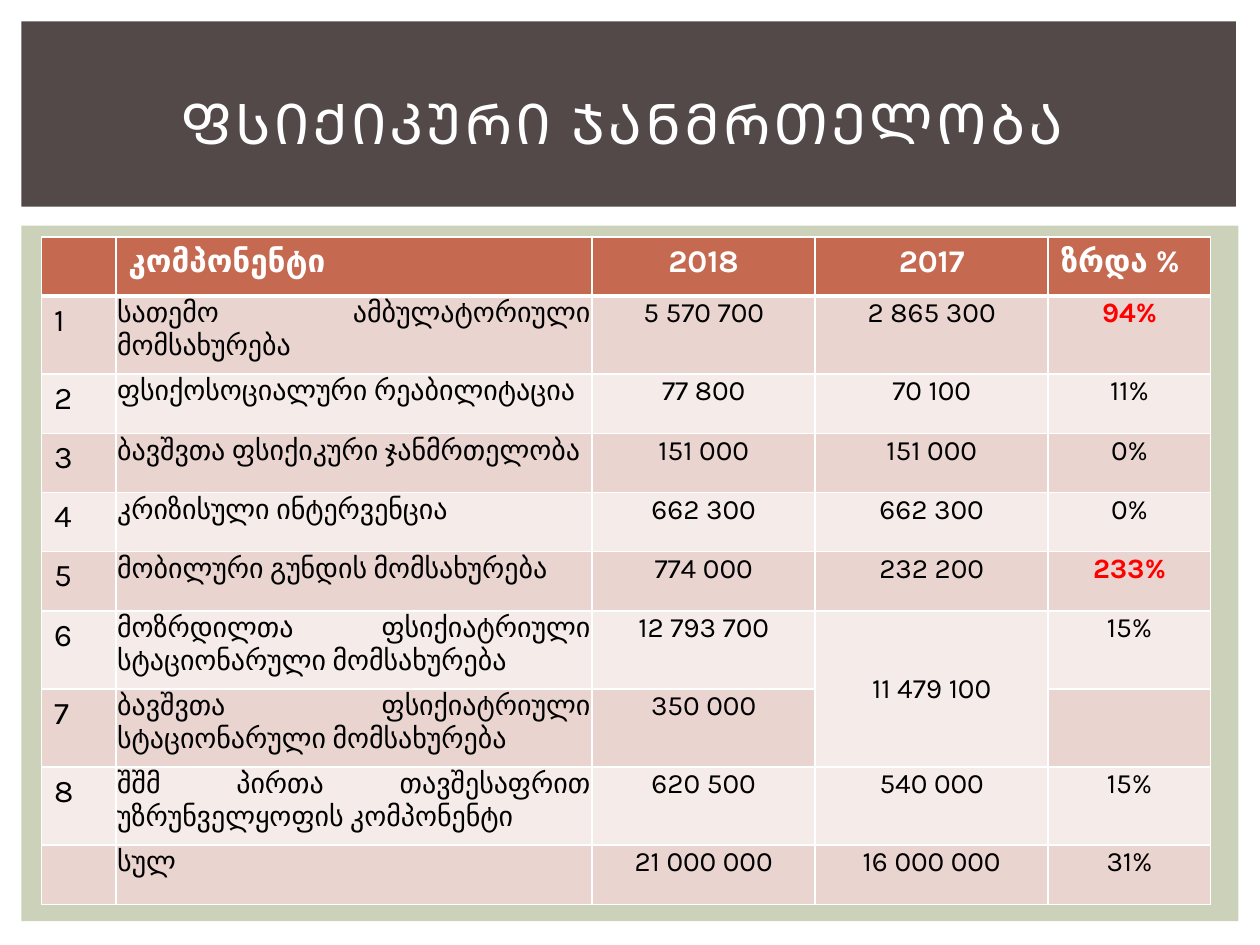
import lxml.etree
import pptx
import pptx.dml.color
import pptx.enum.shapes
import pptx.enum.text
import pptx.oxml.ns
import pptx.util

Inches = pptx.util.Inches
Pt = pptx.util.Pt
RGBColor = pptx.dml.color.RGBColor
Align = pptx.enum.text.PP_ALIGN
Anchor = pptx.enum.text.MSO_ANCHOR

FONT = "Karla"
WHITE = RGBColor(0xFF, 0xFF, 0xFF)
BLACK = RGBColor(0x00, 0x00, 0x00)
RED = RGBColor(0xFF, 0x00, 0x00)
SAGE = RGBColor(0xCC, 0xD1, 0xB9)
BROWN = RGBColor(0x53, 0x49, 0x49)
TERRACOTTA = RGBColor(0xC6, 0x69, 0x51)
BANDS = (RGBColor(0xF5, 0xEB, 0xE9), RGBColor(0xEA, 0xD4, 0xD0))

TITLE = "ᲤᲡᲘᲥᲘᲙᲣᲠᲘ ᲯᲐᲜᲛᲠᲗᲔᲚᲝᲑᲐ "
COLUMN_WIDTHS = (0.59, 3.78, 1.77, 1.85, 1.29)
ROW_HEIGHT = 0.47
TALL_ROW_HEIGHT = 0.62
TALL_ROWS = (1, 6, 7, 8)
HIGHLIGHTS = ("94%", "233%")
ROWS = (
    ("", "კომპონენტი", "2018", "2017", "ზრდა %"),
    ("1", "სათემო ამბულატორიული მომსახურება", "5 570 700", "2 865 300", "94%"),
    ("2", "ფსიქოსოციალური რეაბილიტაცია", "77 800", "70 100", "11%"),
    ("3", "ბავშვთა ფსიქიკური ჯანმრთელობა", "151 000", "151 000", "0%"),
    ("4", "კრიზისული ინტერვენცია", "662 300", "662 300", "0%"),
    ("5", "მობილური გუნდის მომსახურება", "774 000", "232 200", "233%"),
    ("6", "მოზრდილთა ფსიქიატრიული სტაციონარული მომსახურება",
     "12 793 700", "11 479 100", "15%"),
    ("7", "ბავშვთა ფსიქიატრიული სტაციონარული მომსახურება", "350 000", "", ""),
    ("8", "შშმ პირთა თავშესაფრით უზრუნველყოფის კომპონენტი",
     "620 500", "540 000", "15%"),
    ("", "სულ", "21 000 000", "16 000 000", "31%"),
)


def format_paragraph(paragraph, size, color, bold, alignment):
    paragraph.alignment = alignment
    for run in paragraph.runs:
        run.font.name = FONT
        run.font.size = Pt(size)
        run.font.bold = bold
        run.font.color.rgb = color


def add_panel(slide, left, top, width, height, color):
    shape = slide.shapes.add_shape(
        pptx.enum.shapes.MSO_SHAPE.RECTANGLE,
        Inches(left), Inches(top), Inches(width), Inches(height))
    shape.shadow.inherit = False
    shape.fill.solid()
    shape.fill.fore_color.rgb = color
    shape.line.fill.background()


def add_title(slide):
    shape = slide.shapes.add_textbox(
        Inches(0.42), Inches(0.39), Inches(9.17), Inches(1.15))
    text_frame = shape.text_frame
    text_frame.word_wrap = True
    text_frame.vertical_anchor = Anchor.MIDDLE
    text_frame.text = TITLE
    paragraph = text_frame.paragraphs[0]
    format_paragraph(paragraph, 32, WHITE, False, Align.CENTER)
    paragraph.runs[0].font._element.set("spc", "200")


def set_borders(cell, row_index):
    properties = cell._tc.get_or_add_tcPr()
    widths = {"lnL": 1, "lnR": 1,
              "lnT": 3 if row_index == 1 else 1,
              "lnB": 3 if row_index == 0 else 1}
    for position, (side, width) in enumerate(widths.items()):
        line = lxml.etree.Element(pptx.oxml.ns.qn(f"a:{side}"), w=str(Pt(width)))
        fill = lxml.etree.SubElement(line, pptx.oxml.ns.qn("a:solidFill"))
        lxml.etree.SubElement(fill, pptx.oxml.ns.qn("a:srgbClr"), val=str(WHITE))
        properties.insert(position, line)


def fill_cell(cell, text, row_index, column_index):
    is_header = row_index == 0
    cell.fill.solid()
    cell.fill.fore_color.rgb = TERRACOTTA if is_header else BANDS[row_index % 2]
    set_borders(cell, row_index)
    cell.text_frame.text = text
    paragraph = cell.text_frame.paragraphs[0]
    if is_header:
        alignment = Align.CENTER if column_index in (2, 3) else Align.LEFT
        format_paragraph(paragraph, 18, WHITE, True, alignment)
    elif column_index == 0:
        format_paragraph(paragraph, 18, BLACK, False, Align.LEFT)
    else:
        cell.margin_left = cell.margin_right = cell.margin_top = Inches(0.01)
        cell.margin_bottom = 0
        highlighted = text in HIGHLIGHTS
        alignment = Align.JUSTIFY if column_index == 1 else Align.CENTER
        format_paragraph(paragraph, 16, RED if highlighted else BLACK,
                         highlighted, alignment)


def add_budget_table(slide):
    heights = [TALL_ROW_HEIGHT if index in TALL_ROWS else ROW_HEIGHT
               for index in range(len(ROWS))]
    table = slide.shapes.add_table(
        len(ROWS), len(COLUMN_WIDTHS), Inches(0.33), Inches(1.88),
        Inches(sum(COLUMN_WIDTHS)), Inches(sum(heights))).table
    for column, width in zip(table.columns, COLUMN_WIDTHS):
        column.width = Inches(width)
    for row, height in zip(table.rows, heights):
        row.height = Inches(height)
    for row_index, texts in enumerate(ROWS):
        for column_index, text in enumerate(texts):
            fill_cell(table.cell(row_index, column_index), text,
                      row_index, column_index)
    inpatient_cell = table.cell(6, 3)
    inpatient_cell.merge(table.cell(7, 3))
    inpatient_cell.vertical_anchor = Anchor.MIDDLE


def main():
    presentation = pptx.Presentation()
    presentation.slide_width = Inches(10)
    presentation.slide_height = Inches(7.5)
    slide = presentation.slides.add_slide(presentation.slide_layouts[6])
    add_panel(slide, 0.17, 1.79, 9.66, 5.52, SAGE)
    add_panel(slide, 0.17, 0.17, 9.64, 1.47, BROWN)
    add_budget_table(slide)
    add_title(slide)
    presentation.save("out.pptx")


if __name__ == "__main__":
    main()
